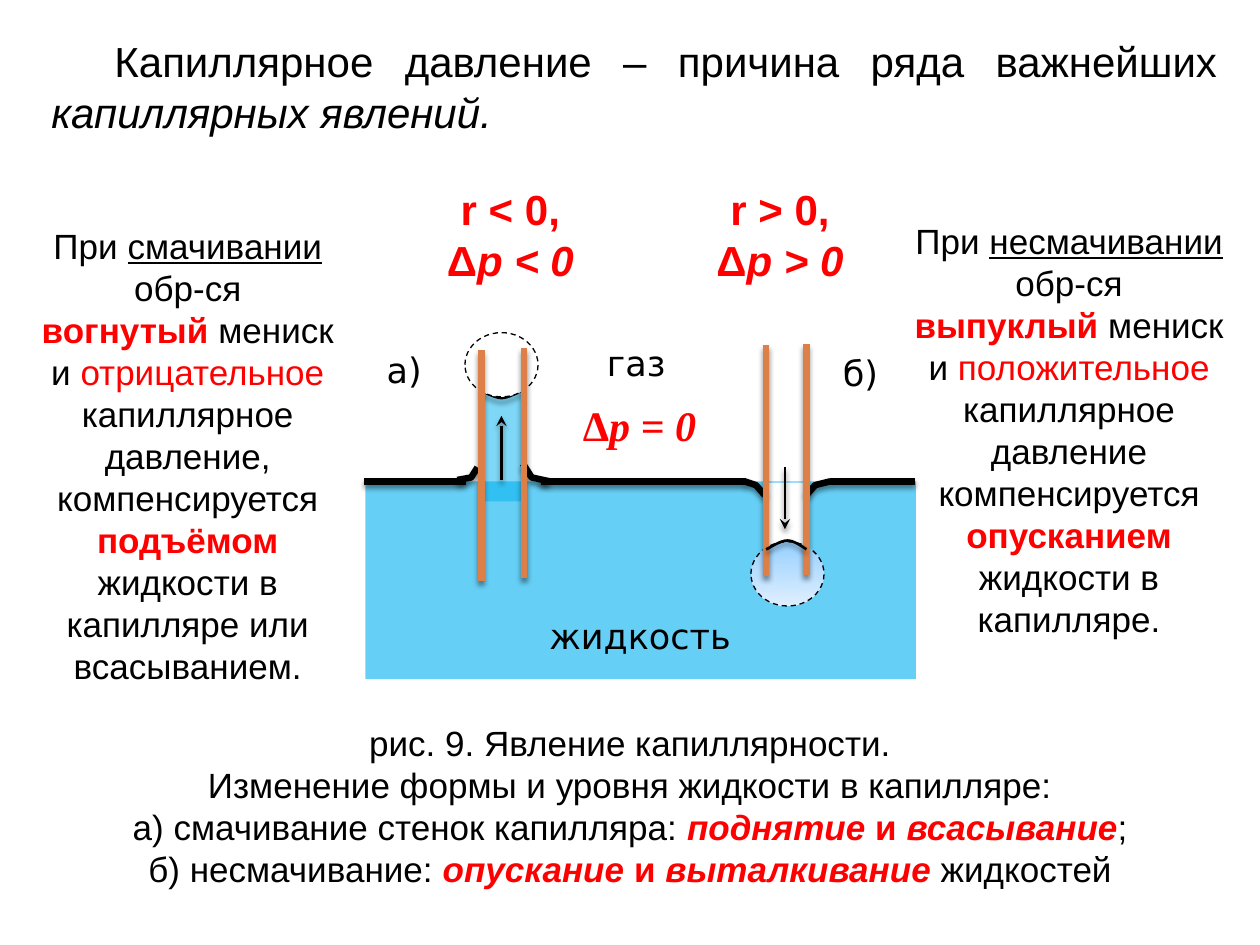
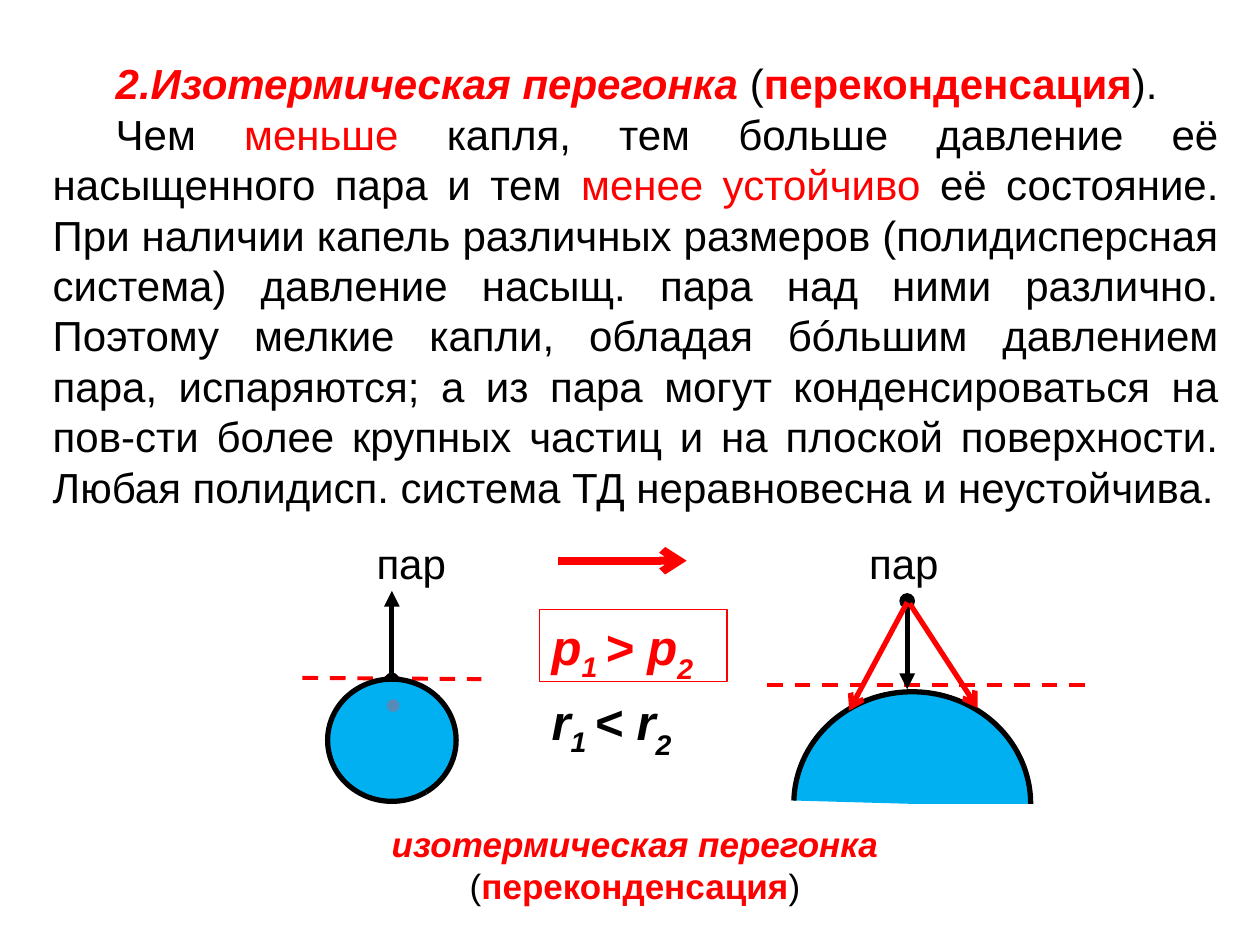
from lxml.etree import SubElement
from pptx import Presentation
from pptx.dml.color import RGBColor
from pptx.enum.dml import MSO_LINE
from pptx.enum.shapes import MSO_CONNECTOR, MSO_SHAPE as SHAPE
from pptx.enum.text import MSO_ANCHOR as ANCHOR, PP_ALIGN as ALIGN
from pptx.oxml.ns import qn
from pptx.util import Emu, Pt

EMU_PER_PX = 9144
BLACK, WHITE, RED = "000000", "FFFFFF", "FF0000"
WATER, TUBE, CENTER_DOT = "00B0F0", "DD8047", "558BB8"
SURFACE_Y = 382
LEFT_TUBE, RIGHT_TUBE = (382, 416), (608, 640)
SUBSCRIPTS = {"s": "-25000", "d": "-30000"}


def px(value):
    return Emu(round(value * EMU_PER_PX))


def color(value):
    return RGBColor.from_string(value)


def style_line(line, line_color, width, dashed=False):
    line.color.rgb = color(line_color)
    line.width = Pt(width)
    if dashed:
        line.dash_style = MSO_LINE.DASH


def set_effects(shape, shadow=False):
    properties = shape._element.spPr
    effects = properties.find(qn("a:effectLst"))
    if effects is None:
        effects = SubElement(properties, qn("a:effectLst"))
    if shadow:
        outer = SubElement(effects, qn("a:outerShdw"), blurRad="38100", dist="30000",
                           dir="5400000", rotWithShape="0")
        shade = SubElement(outer, qn("a:srgbClr"), val=BLACK)
        SubElement(shade, qn("a:alpha"), val="45000")


def write_paragraph(paragraph, runs, size, font, align, indent=0):
    paragraph.alignment = align
    if indent:
        properties = paragraph._p.get_or_add_pPr()
        properties.set("marL", "0")
        properties.set("indent", str(px(indent)))
    for text, style in runs:
        for position, line in enumerate(text.split("\n")):
            if position:
                paragraph.add_line_break()
            if not line:
                continue
            run = paragraph.add_run()
            run.text = line
            run.font.name = font
            run.font.size = Pt(size)
            run.font.bold = "b" in style
            run.font.italic = "i" in style
            run.font.underline = "u" in style
            run.font.color.rgb = color(RED if "r" in style else BLACK)
            for mark, offset in SUBSCRIPTS.items():
                if mark in style:
                    run._r.get_or_add_rPr().set("baseline", offset)


def add_text(slide, box, paragraphs, size=20, font="Arial", align=ALIGN.CENTER,
             anchor=ANCHOR.TOP, wrap=True, indent=0):
    shape = slide.shapes.add_textbox(*map(px, box))
    frame = shape.text_frame
    frame.word_wrap = wrap
    frame.vertical_anchor = anchor
    for position, runs in enumerate(paragraphs):
        paragraph = frame.add_paragraph() if position else frame.paragraphs[0]
        write_paragraph(paragraph, runs, size, font, align, indent)
    return shape


def add_heading(slide, box, paragraphs):
    return add_text(slide, box, paragraphs, 24, align=ALIGN.JUSTIFY,
                    anchor=ANCHOR.MIDDLE, indent=50)


def add_label(slide, box, text, align=ALIGN.CENTER):
    add_text(slide, box, [[(text, "")]], font="DejaVu Sans", align=align)


def add_figure(slide, kind, box, fill=None, opacity=100, line=None, width=0.75, dashed=False):
    shape = slide.shapes.add_shape(kind, *map(px, box))
    shape.shadow.inherit = False
    if fill:
        shape.fill.solid()
        shape.fill.fore_color.rgb = color(fill)
        if opacity < 100:
            tint = shape._element.spPr.find(qn("a:solidFill")).find(qn("a:srgbClr"))
            SubElement(tint, qn("a:alpha"), val=str(opacity * 1000))
    else:
        shape.fill.background()
    if line:
        style_line(shape.line, line, width, dashed)
    else:
        shape.line.fill.background()
    return shape


def add_line(slide, start, end, line_color, width, dashed=False, head=None, tail=None,
             shadow=False):
    connector = slide.shapes.add_connector(MSO_CONNECTOR.STRAIGHT, *map(px, (*start, *end)))
    style_line(connector.line, line_color, width, dashed)
    outline = connector.line._get_or_add_ln()
    for tag, kind in (("a:headEnd", head), ("a:tailEnd", tail)):
        if kind:
            SubElement(outline, qn(tag), type=kind)
    set_effects(connector, shadow)


def add_outline(slide, points, width):
    start, *others = [(px(x), px(y)) for x, y in points]
    builder = slide.shapes.build_freeform(*start)
    builder.add_line_segments(others, close=False)
    shape = builder.convert_to_shape()
    shape.fill.background()
    style_line(shape.line, BLACK, width)
    shape.shadow.inherit = False
    set_effects(shape, shadow=True)


def curve(start, *segments, steps=8):
    points = [start]
    for control_1, control_2, end in segments:
        for step in range(1, steps + 1):
            t = step / steps
            weights = ((1 - t) ** 3, 3 * t * (1 - t) ** 2, 3 * t * t * (1 - t), t ** 3)
            knots = (start, control_1, control_2, end)
            points.append(tuple(sum(w * knot[axis] for w, knot in zip(weights, knots))
                                for axis in (0, 1)))
        start = end
    return points


def add_tube(slide, walls, tops):
    for x, top in zip(walls, tops):
        add_line(slide, (x, top), (x, top + 183), TUBE, 3.75, shadow=True)


def draw_capillaries(slide):
    add_figure(slide, SHAPE.RECTANGLE, (290, 382, 437, 157), WATER, 60)
    for left, right in ((289, 370), (429, 592), (659, 726)):
        add_line(slide, (left, SURFACE_Y), (right, SURFACE_Y), BLACK, 3.75, shadow=True)
    add_figure(slide, SHAPE.RECTANGLE, (608, 383, 32, 56), WHITE)
    add_figure(slide, SHAPE.RECTANGLE, (380, 309, 36, 89), WATER, 50)
    add_outline(slide, curve((382, 310), ((384, 311), (393, 316), (398, 316)),
                             ((404, 316), (411, 311), (415, 310))), 1.5)
    add_label(slide, (297, 272, 63, 55), "а)", ALIGN.LEFT)
    add_label(slide, (659, 274, 52, 64), "б)", ALIGN.LEFT)
    add_label(slide, (414, 483, 188, 44), "жидкость")
    add_label(slide, (461, 266, 88, 51), "газ")
    for bend in (((415, 368), (422, 379), (436, 382)),
                 ((591, 382), (600, 385), (607, 393)),
                 ((640, 393), (647, 385), (659, 382)),
                 ((363, 381), (374, 379), (379, 371))):
        add_outline(slide, bend, 3.75)
    convex = add_figure(slide, SHAPE.OVAL, (596, 430, 58, 51), line=BLACK, dashed=True)
    convex.fill.gradient()
    convex.fill.gradient_angle = 270
    for stop, shade in zip(convex.fill.gradient_stops, ("96D0FF", "E0EFFF")):
        stop.color.rgb = color(shade)
    for x, start, end in ((398, 381, 330), (623, 371, 420)):
        add_line(slide, (x, start), (x, end), BLACK, 1.5, tail="stealth", shadow=True)
    add_tube(slide, RIGHT_TUBE, (274, 273))
    add_outline(slide, curve((608, 436), ((611, 435), (619, 429), (625, 429)),
                             ((630, 429), (637, 434), (640, 436))), 1.5)
    add_figure(slide, SHAPE.OVAL, (369, 264, 58, 51), WHITE, line=BLACK, dashed=True)
    add_tube(slide, LEFT_TUBE, (278, 276))


def build_capillarity(slide):
    add_heading(slide, (31, 23, 945, 91), [[
        ("Капиллярное давление – причина ряда важнейших ", ""),
        ("капиллярных явлений.", "i")]])
    add_text(slide, (49, 568, 902, 141), [
        [("рис. 9. Явление капиллярности.", "")],
        [("Изменение формы и уровня жидкости в капилляре:", "")],
        [("а) смачивание стенок капилляра: ", ""), ("поднятие", "rbi"), (" и ", "rb"),
         ("всасывание", "rbi"), (";", "")],
        [("б) несмачивание: ", ""), ("опускание", "rbi"), (" и ", "rb"),
         ("выталкивание ", "rbi"), ("жидкостей", "")]])
    draw_capillaries(slide)
    add_text(slide, (23, 173, 252, 414), [[
        ("При ", ""), ("смачивании", "u"), (" обр-ся\n", ""), ("вогнутый", "rb"),
        (" мениск и ", ""), ("отрицательноe", "r"),
        (" капиллярноe давление, компенсируется ", ""), ("подъёмом", "rb"),
        (" жидкости в капилляре или всасыванием.", "")]])
    add_text(slide, (713, 169, 271, 347), [[
        ("При ", ""), ("несмачивании", "u"), (" обр-ся\n", ""), ("выпуклый", "rb"),
        (" мениск и ", ""), ("положительное", "r"),
        (" капиллярное давление компенсируется ", ""), ("опусканием\n", "rb"),
        ("жидкости в капилляре.", "")]])
    for left, sign in ((344, "<"), (558, ">")):
        add_text(slide, (left, 141, 122, 91),
                 [[(f"r {sign} 0,\nΔ", "rb"), (f"р {sign} 0", "rbi")]], 24, wrap=False)
    add_text(slide, (452, 312, 111, 50), [[("Δ", "rb"), ("р = 0", "rbi")]], 24,
             "Times New Roman", wrap=False)


def add_comparison(slide, box, letter, sign, style):
    return add_text(slide, box, [[
        (letter, style), ("1 ", style + "s"), (f"{sign} {letter}", style), ("2", style + "d")]],
        28, align=ALIGN.LEFT, wrap=False)


def add_drop(slide, box, angles):
    drop = add_figure(slide, SHAPE.ARC, box, WATER, line=BLACK, width=3)
    for position, angle in enumerate(angles):
        drop.adjustments[position] = angle


def build_distillation(slide):
    add_line(slide, (240, 538), (382, 539), RED, 2.25, dashed=True)
    add_line(slide, (311, 540), (311, 469), BLACK, 3, head="oval", tail="triangle")
    add_drop(slide, (260, 539, 102, 97), (34.14, 33.91))
    add_line(slide, (443, 445), (545, 445), RED, 4.5, tail="arrow")
    add_text(slide, (289, 648, 430, 77), [[
        ("изотермическая перегонка ", "rbi"), ("(", ""), ("переконденсация", "rb"), (")", "")]])
    heading = add_heading(slide, (32, 39, 945, 374), [
        [("Изотермическая перегонка ", "rbi"), ("(", ""), ("переконденсация", "rb"), (").", "")],
        [("Чем ", ""), ("меньше ", "r"),
         ("капля, тем больше давление её насыщенного пара и тем ", ""),
         ("менее устойчиво ", "r"),
         ("её состояние. При наличии капель различных размеров (полидисперсная система) "
          "давление насыщ. пара над ними различно. Поэтому мелкие капли, обладая бóльшим "
          "давлением пара, испаряются; а из пара могут конденсироваться на пов-сти более "
          "крупных частиц и на плоской поверхности. Любая полидисп. система ТД "
          "неравновесна и неустойчива.", "")]])
    numbered = heading.text_frame.paragraphs[0]._p.get_or_add_pPr()
    SubElement(numbered, qn("a:buAutoNum"), type="arabicPeriod", startAt="2")
    add_line(slide, (609, 544), (861, 544), RED, 2.25, dashed=True)
    add_line(slide, (720, 477), (720, 547), BLACK, 3, head="oval", tail="triangle")
    add_drop(slide, (630, 549, 188, 178), (108.97, 0))
    add_line(slide, (720, 478), (674, 564), RED, 3, tail="arrow")
    add_line(slide, (722, 479), (776, 562), RED, 3, tail="arrow")
    pressure = add_comparison(slide, (428, 484, 149, 57), "р", ">", "rbi")
    pressure.text_frame.word_wrap = True
    style_line(pressure.line, RED, 0.75)
    add_comparison(slide, (428, 544, 132, 57), "r", "<", "bi")
    for left in (289, 680):
        add_text(slide, (left, 422, 76, 50), [[("пар", "")]], 24, align=ALIGN.LEFT, wrap=False)
    add_figure(slide, SHAPE.OVAL, (308, 556, 8, 8), CENTER_DOT, line=CENTER_DOT, width=1.5)


def main():
    presentation = Presentation()
    presentation.slide_width, presentation.slide_height = px(1000), px(750)
    for build in (build_capillarity, build_distillation):
        build(presentation.slides.add_slide(presentation.slide_layouts[6]))
    presentation.save("out.pptx")


if __name__ == "__main__":
    main()
